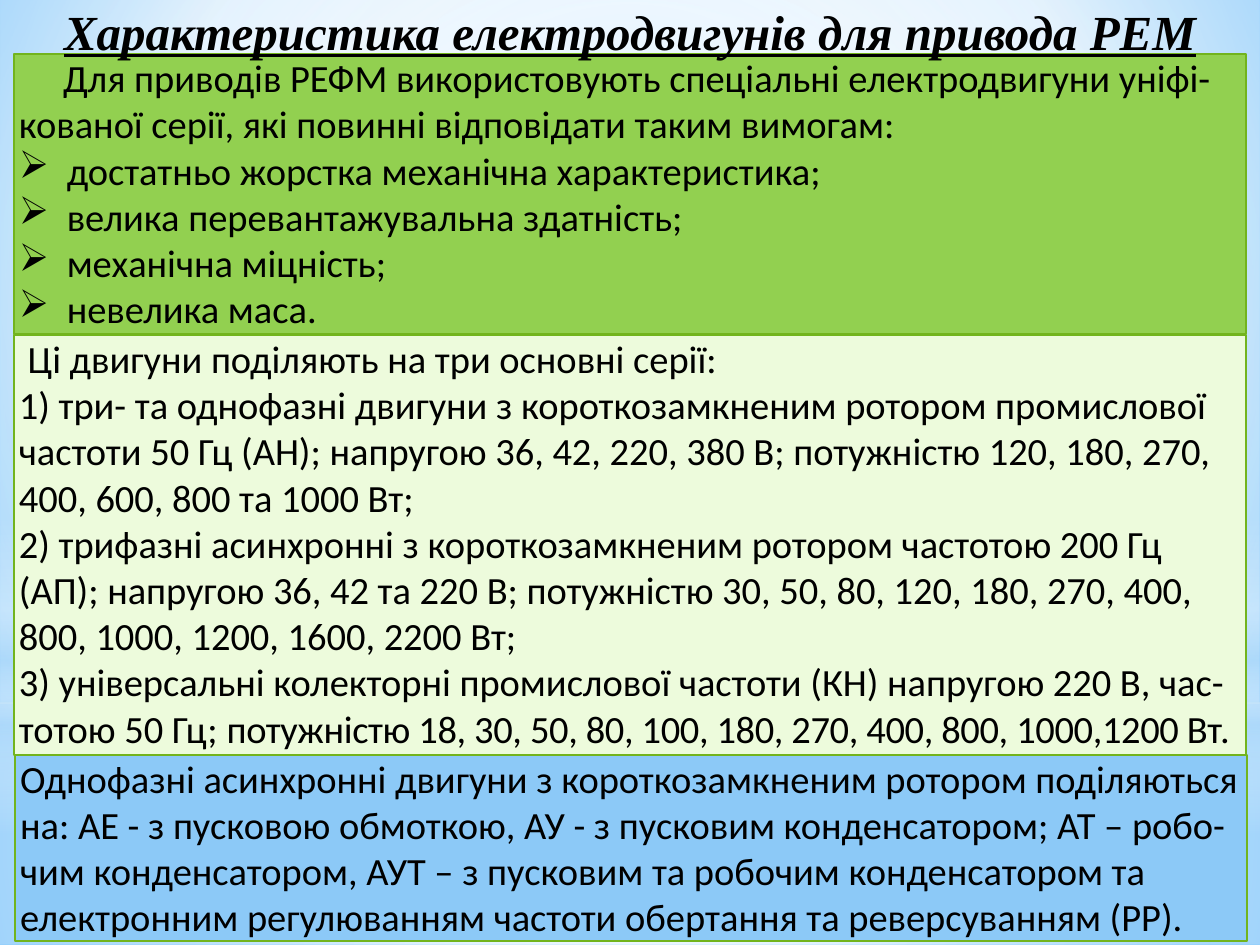
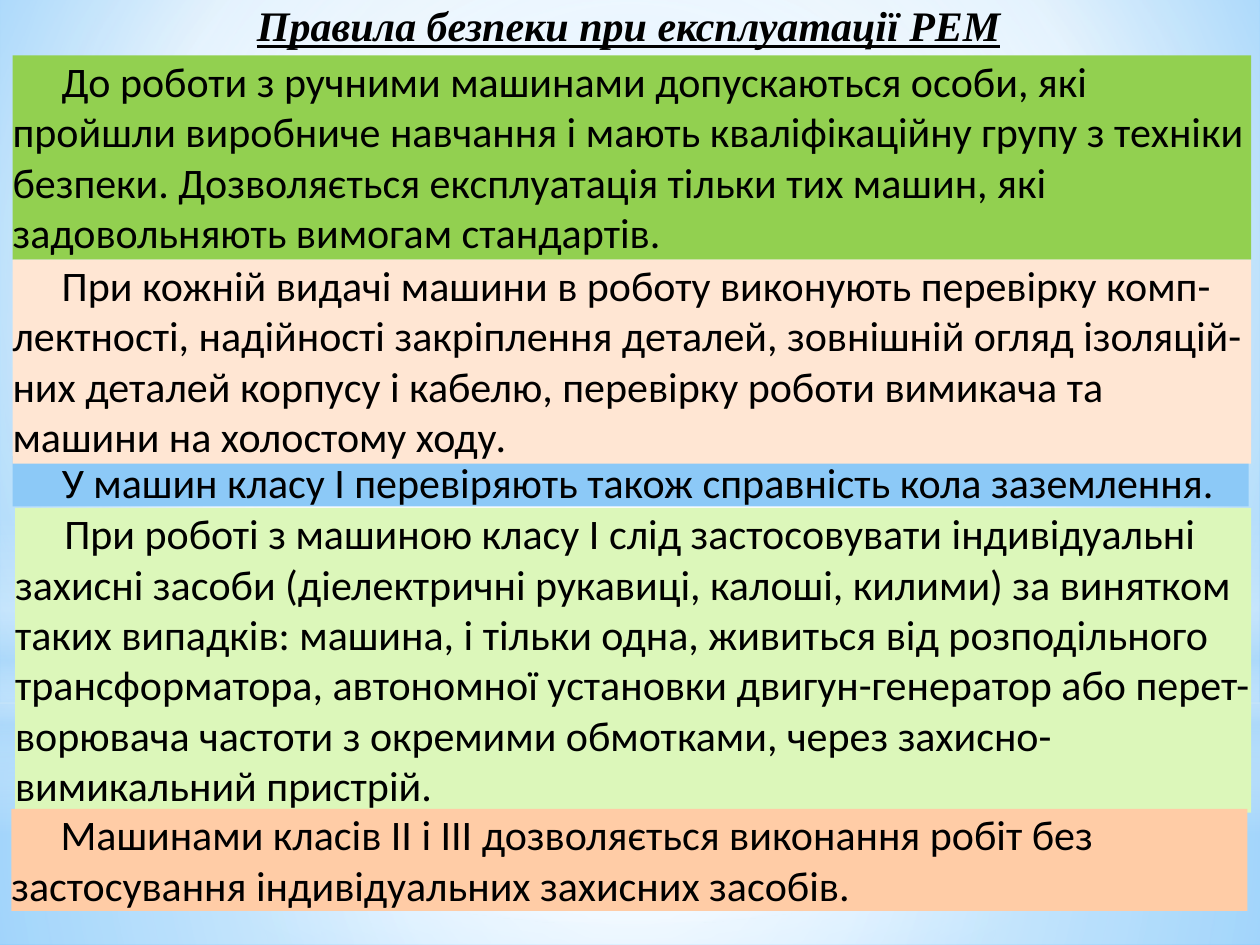
from lxml.etree import SubElement
from pptx import Presentation
from pptx.dml.color import RGBColor
from pptx.enum.shapes import MSO_SHAPE
from pptx.enum.text import MSO_ANCHOR, MSO_AUTO_SIZE, PP_ALIGN
from pptx.oxml.ns import qn
from pptx.util import Inches, Pt

BODY_FONT, TITLE_FONT = "Calibri", "Times New Roman"
TEXT, BORDER = "000000", "72B41D"
GREEN, BLUE = "92D050", "8CC9F7"
PALE_GREEN, LIME, PEACH, ORANGE = "EDFBDC", "DCF7BA", "FFE6D3", "FFCCA6"
WHITE, SKY = "FFFFFF", "B4DCFA"
CENTRE = (50, 50, 50, 50)

# Stops are (position %, colour, opacity %); a focus of None means top to bottom.
BACKGROUND = ([(0, "9ED5FF", 100), (60, WHITE, 100), (100, "5BB9FF", 100)],
              (20, 10, 20, 60))
GLOWS = [
    (MSO_SHAPE.RECTANGLE, (0, 5.58, 10, 1.92),
     [(0, WHITE, 91), (37, WHITE, 76), (100, SKY, 79)], CENTRE),
    (MSO_SHAPE.RECTANGLE, (0, 0, 10, 5.58),
     [(0, WHITE, 89), (48, WHITE, 62), (100, SKY, 79)], CENTRE),
    (MSO_SHAPE.RECTANGLE, (0, 4.12, 10, 2.5),
     [(0, WHITE, 0), (29, WHITE, 30), (45, SKY, 40), (55, WHITE, 26),
      (65, SKY, 60), (100, WHITE, 0)], None),
    (MSO_SHAPE.OVAL, (0, 1.75, 10, 5.58),
     [(0, WHITE, 100), (56, WHITE, 0)], CENTRE),
]

# Each paragraph is (style, text) or (style, text, tightened ending).
SLIDES = [
    {
        "title": "Характеристика електродвигунів для привода РЕМ",
        "title_box": (0.12, 0.08, 9.76, 0.4), "title_size": 28,
        "size": 22, "inset": 0.04, "border": BORDER, "first_line": 0.35,
        "panels": [
            (GREEN, (0.11, 0.43, 9.78, 2.22), [
                ("first_line", "Для приводів РЕФМ використовують спеціальні "
                 "електродвигуни уніфі-кованої серії, які повинні відповідати "
                 "таким вимогам:"),
                ("arrow", "достатньо жорстка механічна характеристика;"),
                ("arrow", "велика перевантажувальна здатність;"),
                ("arrow", "механічна міцність;"),
                ("arrow", "невелика маса."),
            ]),
            (PALE_GREEN, (0.11, 2.66, 9.78, 3.33), [
                ("lead_in", "Ці двигуни поділяють на три основні серії:"),
                ("number", " три- та однофазні двигуни з короткозамкненим "
                 "ротором промислової частоти 50 Гц (АН); напругою 36, 42, 220, "
                 "380 В; потужністю 120, 180, 270, 400, 600, 800 та 1000 Вт;"),
                ("number", " трифазні асинхронні з короткозамкненим ротором "
                 "частотою 200 Гц (АП); напругою 36, 42 та 220 В; потужністю "
                 "30, 50, 80, 120, 180, 270, 400, 800, 1000, 1200, 1600, 2200 Вт;"),
                ("number", " універсальні колекторні промислової частоти (КН) "
                 "напругою 220 В, час-тотою 50 Гц; ",
                 "потужністю 18, 30, 50, 80, 100, 180, 270, 400, 800, "
                 "1000,1200 Вт."),
            ]),
            (BLUE, (0.12, 5.99, 9.78, 1.48), [
                ("plain", "Однофазні асинхронні двигуни з короткозамкненим "
                 "ротором поділяються на: АЕ - з пусковою обмоткою, АУ - з "
                 "пусковим конденсатором; АТ – робо-чим конденсатором, АУТ – з "
                 "пусковим та робочим конденсатором та електронним регулюванням "
                 "частоти обертання та реверсуванням (РР)."),
            ]),
        ],
    },
    {
        "title": "Правила безпеки при експлуатації РЕМ",
        "title_box": (0.12, 0.06, 9.74, 0.34), "title_size": 24,
        "size": 24, "inset": 0, "border": None, "first_line": 0.39,
        "panels": [
            (GREEN, (0.1, 0.44, 9.83, 1.62), [
                ("first_line", "До роботи з ручними машинами допускаються особи, "
                 "які пройшли виробниче навчання і мають кваліфікаційну групу з "
                 "техніки безпеки. Дозволяється експлуатація тільки тих машин, "
                 "які задовольняють вимогам стандартів."),
            ]),
            (BLUE, (0.1, 3.62, 9.81, 0.4), [
                ("first_line", "У машин класу І перевіряють також справність "
                 "кола заземлення."),
            ]),
            (PEACH, (0.1, 2.06, 9.83, 1.62), [
                ("first_line", "При кожній видачі машини в роботу виконують "
                 "перевірку комп-лектності, надійності закріплення деталей, "
                 "зовнішній огляд ізоляцій-них деталей корпусу і кабелю, "
                 "перевірку роботи вимикача та машини на холостому ходу."),
            ]),
            (LIME, (0.12, 4.03, 9.81, 2.42), [
                ("first_line", "При роботі з машиною класу І слід застосовувати "
                 "індивідуальні захисні засоби (діелектричні рукавиці, калоші, "
                 "килими) за винятком таких випадків: машина, і тільки одна, "
                 "живиться від розподільного трансформатора, автономної "
                 "установки двигун-генератор або перет-ворювача частоти з "
                 "окремими обмотками, через захисно-вимикальний пристрій."),
            ]),
            (ORANGE, (0.09, 6.42, 9.81, 0.81), [
                ("first_line", "Машинами класів II і III дозволяється виконання "
                 "робіт без застосування індивідуальних захисних засобів."),
            ]),
        ],
    },
]


def color(value):
    return RGBColor.from_string(value)


def paint_gradient(fill, element, stops, focus):
    """Fill with stops that spread from the focus rectangle, or downwards."""
    fill.gradient()
    gradient = element.find(".//" + qn("a:gradFill"))
    for child in list(gradient):
        gradient.remove(child)
    stop_list = SubElement(gradient, qn("a:gsLst"))
    for position, value, opacity in stops:
        stop = SubElement(stop_list, qn("a:gs"), pos=str(position * 1000))
        stop_color = SubElement(stop, qn("a:srgbClr"), val=value)
        SubElement(stop_color, qn("a:alpha"), val=str(opacity * 1000))
    if focus is None:
        SubElement(gradient, qn("a:lin"), ang="5400000", scaled="0")
    else:
        circle = SubElement(gradient, qn("a:path"), path="circle")
        sides = {side: str(share * 1000) for side, share in zip("ltrb", focus)}
        SubElement(circle, qn("a:fillToRect"), **sides)


def add_plain_shape(slide, kind, box):
    shape = slide.shapes.add_shape(kind, *map(Inches, box))
    shape.shadow.inherit = False
    shape.line.fill.background()
    return shape


def add_glows(slide):
    for kind, box, stops, focus in GLOWS:
        shape = add_plain_shape(slide, kind, box)
        paint_gradient(shape.fill, shape.element, stops, focus)


def prepare_frame(shape, inset=0):
    frame = shape.text_frame
    frame.word_wrap = True
    frame.auto_size = MSO_AUTO_SIZE.SHAPE_TO_FIT_TEXT
    frame.vertical_anchor = MSO_ANCHOR.TOP
    frame.margin_left = frame.margin_right = Inches(inset)
    frame.margin_top = frame.margin_bottom = 0
    return frame


def format_font(font, name, size):
    font.name = name
    font.size = Pt(size)
    font.color.rgb = color(TEXT)


def apply_style(paragraph, style, first_line):
    left, indent = {"first_line": (0, first_line), "lead_in": (0, 0.07),
                    "arrow": (0.38, -0.38)}.get(style, (0, 0))
    paragraph.alignment = PP_ALIGN.LEFT
    properties = paragraph._p.get_or_add_pPr()
    properties.set("marL", str(Inches(left)))
    properties.set("indent", str(Inches(indent)))
    if style == "arrow":
        SubElement(properties, qn("a:buChar"), char="➢")
    elif style == "number":
        SubElement(properties, qn("a:buAutoNum"), type="arabicParenR")


def add_panel(slide, content, fill, box, paragraphs):
    panel = add_plain_shape(slide, MSO_SHAPE.RECTANGLE, box)
    panel.fill.solid()
    panel.fill.fore_color.rgb = color(fill)
    if content["border"]:
        panel.line.color.rgb = color(content["border"])
        panel.line.width = Pt(1.25)
    frame = prepare_frame(panel, content["inset"])
    for index, (style, text, *endings) in enumerate(paragraphs):
        paragraph = frame.add_paragraph() if index else frame.paragraphs[0]
        paragraph.text = text
        apply_style(paragraph, style, content["first_line"])
        for ending in endings:
            run = paragraph.add_run()
            run.text = ending
            run.font._element.set("spc", "-20")
        for run in paragraph.runs:
            format_font(run.font, BODY_FONT, content["size"])


def add_title(slide, content):
    title = slide.shapes.add_textbox(*map(Inches, content["title_box"]))
    paragraph = prepare_frame(title).paragraphs[0]
    paragraph.text = content["title"]
    paragraph.alignment = PP_ALIGN.CENTER
    paragraph.line_spacing = 0.85
    font = paragraph.runs[0].font
    format_font(font, TITLE_FONT, content["title_size"])
    font.bold = font.italic = font.underline = True


def main():
    presentation = Presentation()
    presentation.slide_width, presentation.slide_height = Inches(10), Inches(7.5)
    master = presentation.slide_master
    paint_gradient(master.background.fill, master.element, *BACKGROUND)
    for content in SLIDES:
        slide = presentation.slides.add_slide(presentation.slide_layouts[6])
        add_glows(slide)
        for panel in content["panels"]:
            add_panel(slide, content, *panel)
        add_title(slide, content)
    presentation.save("out.pptx")


if __name__ == "__main__":
    main()
